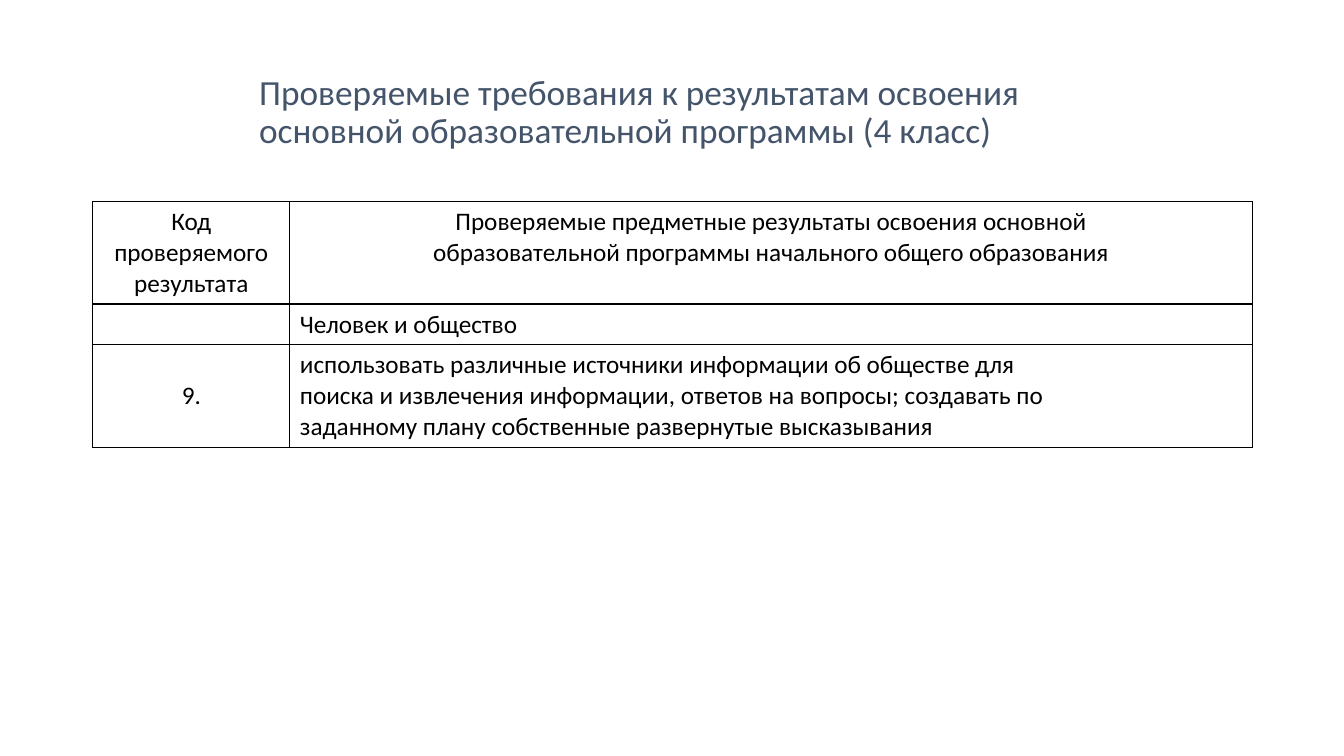
from dataclasses import dataclass

from lxml import etree
from pptx import Presentation
from pptx.dml.color import RGBColor
from pptx.enum.text import MSO_ANCHOR, MSO_AUTO_SIZE, PP_ALIGN
from pptx.oxml.ns import qn
from pptx.util import Inches, Pt

LEFT, CENTER = PP_ALIGN.LEFT, PP_ALIGN.CENTER
TOP, MIDDLE = MSO_ANCHOR.TOP, MSO_ANCHOR.MIDDLE
NO_AUTOFIT = MSO_AUTO_SIZE.NONE
TITLE_ONLY = 5


@dataclass(frozen=True)
class Theme:
    font: str = "Calibri"
    heading: str = "44546A"
    ink: str = "000000"
    heading_size: float = 25.2
    table_size: float = 18
    border_width: float = 1


THEME = Theme()
SLIDE_WIDTH, SLIDE_HEIGHT = Inches(13.33), Inches(7.5)
HEADING_BOX = (Inches(2.47), Inches(1.01), Inches(7.79), Inches(0.64))
RESULTS_BOX = (Inches(0.92), Inches(2), Inches(11.5), Inches(2.43))
COLUMN_SHARES = (0.17, 0.83)
ROW_LINES = (3, 1, 3)
ROW_PADDING = 0.33

HEADING = ("Проверяемые требования к результатам освоения "
           "основной образовательной программы (4 класс)")
RESULTS = [
    [(["Код", "проверяемого", "результата"], CENTER, TOP),
     (["Проверяемые предметные результаты освоения основной",
       "образовательной программы начального общего образования"], CENTER, TOP)],
    [([], LEFT, TOP),
     (["Человек и общество"], LEFT, TOP)],
    [(["9."], CENTER, MIDDLE),
     (["использовать различные источники информации об обществе для",
       "поиска и извлечения информации, ответов на вопросы; создавать по",
       "заданному плану собственные развернутые высказывания"], LEFT, TOP)],
]


def apply_format(target, values):
    for attribute, value in values.items():
        setattr(target, attribute, value)


def format_font(font, size, color):
    apply_format(font, {"name": THEME.font, "size": Pt(size), "bold": False})
    font.color.rgb = RGBColor.from_string(color)


def add_heading(slide, box):
    left, top, width, height = box
    heading = slide.shapes.title
    apply_format(heading, {"left": left, "top": top, "width": width, "height": height})
    frame = heading.text_frame
    frame.text = HEADING
    apply_format(frame, {
        "word_wrap": True,
        "auto_size": NO_AUTOFIT,
        "vertical_anchor": MIDDLE,
        "margin_bottom": int(height * 0.72),
    })
    paragraph = frame.paragraphs[0]
    apply_format(paragraph, {"alignment": LEFT, "line_spacing": 0.9})
    format_font(paragraph.font, THEME.heading_size, THEME.heading)


def add_borders(cell):
    properties = cell._tc.get_or_add_tcPr()
    for side in ("lnL", "lnR", "lnT", "lnB"):
        border = etree.SubElement(properties, qn(f"a:{side}"),
                                  w=str(Pt(THEME.border_width)))
        fill = etree.SubElement(border, qn("a:solidFill"))
        etree.SubElement(fill, qn("a:srgbClr"), val=THEME.ink)


def fill_cell(cell, lines, alignment, anchor):
    add_borders(cell)
    cell.fill.background()
    cell.vertical_anchor = anchor
    cell.text_frame.text = "\n".join(lines)
    for paragraph in cell.text_frame.paragraphs:
        paragraph.alignment = alignment
        format_font(paragraph.font, THEME.table_size, THEME.ink)


def add_results(slide, box):
    width, height = box[2:]
    table = slide.shapes.add_table(len(RESULTS), len(COLUMN_SHARES), *box).table
    apply_format(table, {"first_row": False, "horz_banding": False})
    for column, share in zip(table.columns, COLUMN_SHARES):
        column.width = int(width * share)
    total_lines = sum(ROW_LINES) + ROW_PADDING * len(ROW_LINES)
    for row, line_count, contents in zip(table.rows, ROW_LINES, RESULTS):
        row.height = int(height * (line_count + ROW_PADDING) / total_lines)
        for cell, content in zip(row.cells, contents):
            fill_cell(cell, *content)


def main():
    presentation = Presentation()
    apply_format(presentation, {"slide_width": SLIDE_WIDTH, "slide_height": SLIDE_HEIGHT})
    slide = presentation.slides.add_slide(presentation.slide_layouts[TITLE_ONLY])
    add_heading(slide, HEADING_BOX)
    add_results(slide, RESULTS_BOX)
    presentation.save("out.pptx")


if __name__ == "__main__":
    main()
